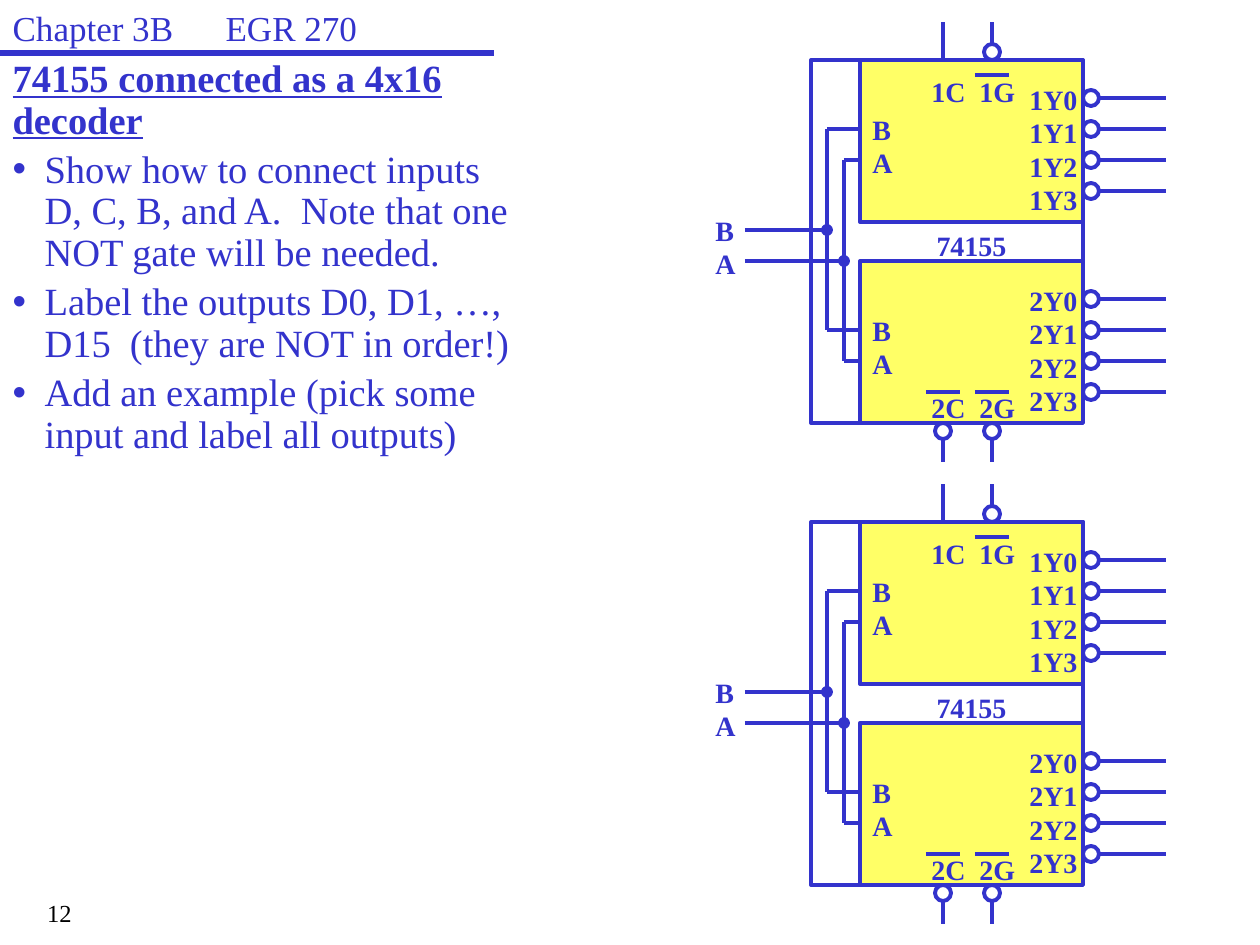
from lxml.etree import SubElement
from pptx import Presentation
from pptx.dml.color import RGBColor
from pptx.enum.shapes import MSO_CONNECTOR, MSO_SHAPE
from pptx.enum.text import MSO_ANCHOR, MSO_AUTO_SIZE, PP_ALIGN
from pptx.oxml.ns import qn
from pptx.util import Emu, Pt

EMU_PER_PX = 914400 // 126
BLUE = "3333CC"
YELLOW = "FFFF66"
FONT = "Times New Roman"

HALF_LEFT, HALF_WIDTH, HALF_HEIGHT = 860, 223, 162
HALF_PITCH = 201
HALF_RIGHT = HALF_LEFT + HALF_WIDTH
OUTPUT_PITCH = 31
BUBBLE_WIDTH, BUBBLE_HEIGHT = 16, 16
C_COLUMN, G_COLUMN = 943, 992


def px(length):
    return Emu(length * EMU_PER_PX)


def color(value):
    return RGBColor.from_string(value)


def add_run(paragraph, text, size, text_color=BLUE, bold=False, underline=False):
    run = paragraph.add_run()
    run.text = text
    run.font.name = FONT
    run.font.size = Pt(size)
    run.font.bold = bold
    run.font.underline = underline
    run.font.color.rgb = color(text_color)


def add_shape(shapes, kind, left, top, width, height, fill=None):
    shape = shapes.add_shape(kind, px(left), px(top), px(width), px(height))
    shape.shadow.inherit = False
    shape.line.color.rgb = color(BLUE)
    shape.line.width = Pt(2.25)
    if fill:
        shape.fill.solid()
        shape.fill.fore_color.rgb = color(fill)
    else:
        shape.fill.background()


def add_circle(shapes, center_x, center_y, width, height, fill=None):
    add_shape(shapes, MSO_SHAPE.OVAL, center_x - width // 2, center_y - height // 2,
              width, height, fill)


def add_bubble(shapes, center_x, center_y):
    add_circle(shapes, center_x, center_y, BUBBLE_WIDTH, BUBBLE_HEIGHT)


def add_line(shapes, start_x, start_y, end_x, end_y, width=2.25):
    line = shapes.add_connector(MSO_CONNECTOR.STRAIGHT, px(start_x), px(start_y),
                                px(end_x), px(end_y))
    line.line.color.rgb = color(BLUE)
    line.line.width = Pt(width)
    SubElement(line._element.spPr, qn("a:effectLst"))


def add_label(shapes, lines, left, top, width, height, centered=False):
    box = shapes.add_textbox(px(left), px(top), px(width), px(height))
    frame = box.text_frame
    frame.word_wrap = centered
    frame.auto_size = MSO_AUTO_SIZE.SHAPE_TO_FIT_TEXT
    for index, text in enumerate(lines):
        paragraph = frame.add_paragraph() if index else frame.paragraphs[0]
        paragraph.alignment = PP_ALIGN.CENTER if centered else PP_ALIGN.LEFT
        add_run(paragraph, text, 16, bold=True)


def add_overbar(shapes, column, y):
    add_line(shapes, column - 17, y, column + 17, y)


def add_half(shapes, top, number):
    add_shape(shapes, MSO_SHAPE.RECTANGLE, HALF_LEFT, top, HALF_WIDTH, HALF_HEIGHT, YELLOW)
    for index in range(4):
        y = top + 38 + index * OUTPUT_PITCH
        add_bubble(shapes, HALF_RIGHT + BUBBLE_WIDTH // 2, y)
        add_line(shapes, HALF_RIGHT + BUBBLE_WIDTH, y, 1166, y)
    add_label(shapes, [f"{number}Y{index}" for index in range(4)], 1017, top + 16, 74, 149)
    add_label(shapes, ["B", "A"], HALF_LEFT, top + 46, 45, 81)


def add_controls(shapes, top):
    bottom = top + HALF_PITCH + HALF_HEIGHT
    add_label(shapes, ["1C  1G"], 919, top + 8, 111, 47)
    add_overbar(shapes, G_COLUMN, top + 15)
    add_line(shapes, C_COLUMN, top, C_COLUMN, top - 38)
    add_bubble(shapes, G_COLUMN, top - BUBBLE_HEIGHT // 2)
    add_line(shapes, G_COLUMN, top - BUBBLE_HEIGHT, G_COLUMN, top - 38)

    add_label(shapes, ["2C  2G"], 919, bottom - 39, 111, 47)
    for column in (C_COLUMN, G_COLUMN):
        add_overbar(shapes, column, bottom - 31)
        add_bubble(shapes, column, bottom + BUBBLE_HEIGHT // 2)
        add_line(shapes, column, bottom + BUBBLE_HEIGHT, column, bottom + 39)


def add_select_input(shapes, bus_x, input_y, upper_y):
    lower_y = upper_y + HALF_PITCH
    add_line(shapes, 745, input_y, bus_x, input_y)
    add_line(shapes, bus_x, lower_y, bus_x, upper_y)
    for y in (upper_y, lower_y):
        add_line(shapes, bus_x, y, HALF_LEFT, y)
    add_circle(shapes, bus_x, input_y, 8, 8, BLUE)


def add_decoder(slide, top):
    shapes = slide.shapes.add_group_shape().shapes
    add_shape(shapes, MSO_SHAPE.RECTANGLE, 811, top, HALF_RIGHT - 811,
              HALF_PITCH + HALF_HEIGHT)
    for index in range(2):
        add_half(shapes, top + index * HALF_PITCH, index + 1)
    add_controls(shapes, top)
    add_select_input(shapes, 827, top + 170, top + 69)
    add_select_input(shapes, 844, top + 201, top + 100)
    add_label(shapes, ["B", "A"], 703, top + 147, 45, 81)
    add_label(shapes, ["74155"], HALF_LEFT, top + HALF_HEIGHT, HALF_WIDTH, 47, centered=True)


def place(shape, left, top, width, height):
    shape.left, shape.top, shape.width, shape.height = map(px, (left, top, width, height))
    frame = shape.text_frame
    frame.word_wrap = True
    frame.auto_size = MSO_AUTO_SIZE.NONE
    frame.vertical_anchor = MSO_ANCHOR.TOP
    return frame


def fill_title(title):
    paragraph = place(title, 0, 0, 1166, 53).paragraphs[0]
    paragraph.alignment = PP_ALIGN.LEFT
    paragraph.space_before = Pt(4)
    tabs = SubElement(paragraph._p.get_or_add_pPr(), qn("a:tabLst"))
    SubElement(tabs, qn("a:tab"), pos=str(px(213)), algn="l")
    add_run(paragraph, "Chapter 3B\tEGR 270", 20)


def format_list_paragraph(paragraph, bulleted):
    paragraph.line_spacing = 0.9
    paragraph.space_before = Pt(4.4)
    properties = paragraph._p.get_or_add_pPr()
    indent = px(32) if bulleted else 0
    properties.set("marL", str(indent))
    properties.set("indent", str(-indent))
    if bulleted:
        SubElement(properties, qn("a:buChar"), char="•")
    else:
        SubElement(properties, qn("a:buNone"))


def fill_body(body):
    frame = place(body, 0, 53, 525, 420)
    heading = frame.paragraphs[0]
    format_list_paragraph(heading, False)
    add_run(heading, "74155 connected as a 4x16 decoder", 22, bold=True, underline=True)
    for text in (
        "Show how to connect inputs D, C, B, and A.  Note that one NOT gate will be needed.",
        "Label the outputs D0, D1, …, D15  (they are NOT in order!)",
        "Add an example (pick some input and label all outputs)",
    ):
        paragraph = frame.add_paragraph()
        format_list_paragraph(paragraph, True)
        add_run(paragraph, text, 22)


def add_page_number(slide):
    box = slide.shapes.add_textbox(px(0), px(892), px(84), px(53))
    box.text_frame.word_wrap = True
    paragraph = box.text_frame.paragraphs[0]
    paragraph.alignment = PP_ALIGN.RIGHT
    add_run(paragraph, "12", 14, "000000")


def main():
    presentation = Presentation()
    presentation.slide_width, presentation.slide_height = px(1260), px(945)
    slide = presentation.slides.add_slide(presentation.slide_layouts[1])
    fill_title(slide.shapes.title)
    fill_body(slide.placeholders[1])
    add_page_number(slide)
    add_line(slide.shapes, 0, 53, 494, 53, 3)
    for top in (522, 60):
        add_decoder(slide, top)
    presentation.save("out.pptx")


if __name__ == "__main__":
    main()
